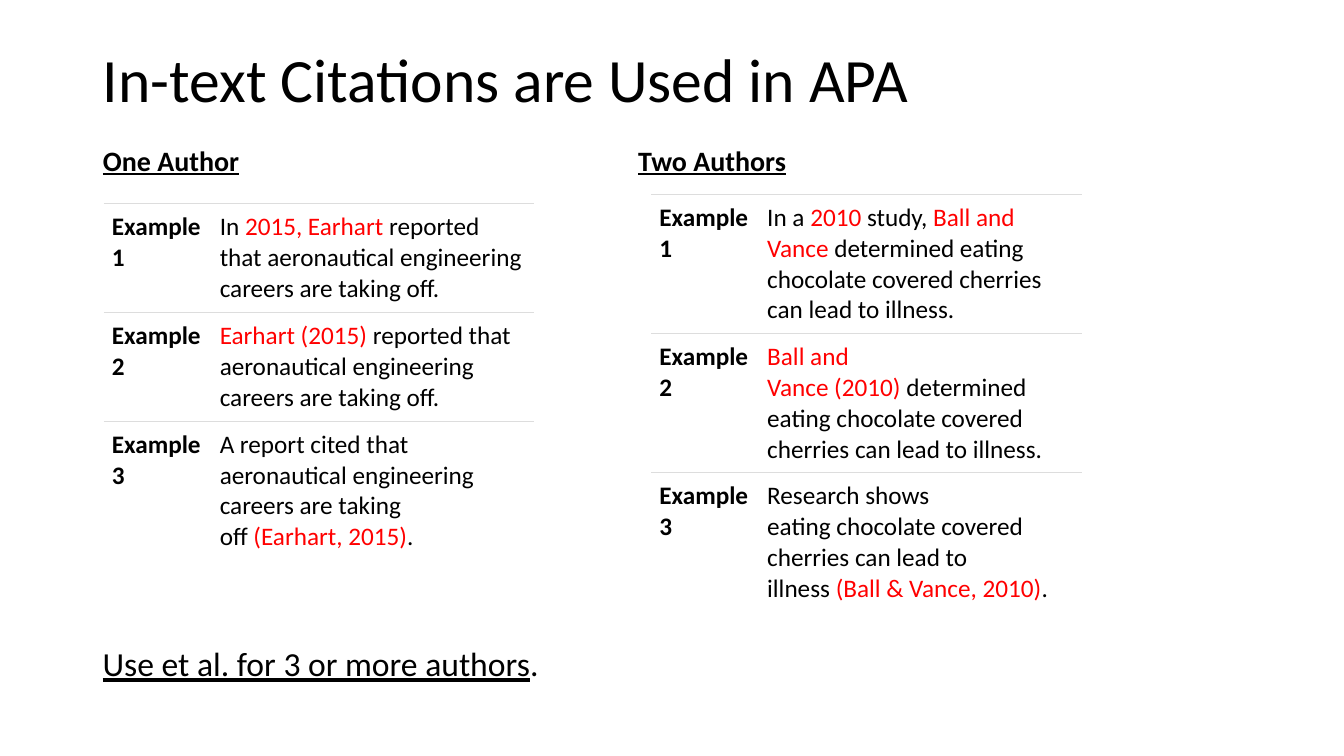
from lxml import etree
from pptx import Presentation
from pptx.dml.color import RGBColor
from pptx.enum import text
from pptx.oxml import ns
from pptx.util import Inches, Pt

BLACK = RGBColor(0, 0, 0)
RED = RGBColor(0xFF, 0, 0)
WHITE = RGBColor(0xFF, 0xFF, 0xFF)
GREY = RGBColor(0xDD, 0xDD, 0xDD)
FONT = "Calibri"
HARD = chr(160)  # no-break space, typed as ~ in the wording

# Wording: parts between bars are citations, shown in red
ONE = [
    "In|~2015, Earhart|~reported that aeronautical engineering careers are taking off.~",
    "|Earhart (2015)|~reported~that aeronautical engineering careers are taking off.",
    "A report cited~that aeronautical engineering careers are taking off~|(Earhart, 2015)|.",
]
TWO = [
    "In a~|2010|~study,~|Ball and Vance|~determined eating chocolate covered cherries "
    "can lead to illness.",
    "|Ball and Vance~(2010)|~determined eating chocolate covered cherries~can lead to illness.",
    "Research shows eating~chocolate covered cherries~can~lead to illness~"
    "|(Ball & Vance, 2010)|.",
]


class Deck:
    def __init__(self):
        self.prs = Presentation()
        self.prs.slide_width = Inches(13.33)
        self.prs.slide_height = Inches(7.5)
        self.slide = self.prs.slides.add_slide(self.prs.slide_layouts[5])

    def run(self, para, words, size, color=BLACK, bold=False, line=False):
        run = para.add_run()
        run.text = words
        font = run.font
        font.name, font.size, font.bold, font.underline = FONT, Pt(size), bold, line
        font.color.rgb = color

    def title(self, words, heads, stop):
        box = self.slide.shapes.title
        box.left, box.top = Inches(0.92), Inches(0.4)
        box.width, box.height = Inches(11.5), Inches(1.45)
        frame = box.text_frame
        frame.word_wrap = True
        frame.auto_size = text.MSO_AUTO_SIZE.NONE
        frame.vertical_anchor = text.MSO_ANCHOR.MIDDLE
        top, sub = frame.paragraphs[0], frame.add_paragraph()
        for para in (top, sub):
            para.alignment = text.PP_ALIGN.LEFT
            para.line_spacing = 0.9
            para.space_before = Pt(0)
        self.run(top, words, 44)
        # Column heads share one line, parted by a tab stop
        sub.space_before = Pt(22)
        tabs = etree.SubElement(sub._p.get_or_add_pPr(), ns.qn("a:tabLst"))
        etree.SubElement(tabs, ns.qn("a:tab"), pos=str(Inches(stop)), algn="l")
        self.run(sub, heads[0], 20, bold=True, line=True)
        self.run(sub, "\t", 20)
        self.run(sub, heads[1], 20, bold=True, line=True)

    def edge(self, cell):
        props = cell._tc.get_or_add_tcPr()
        for spot, side in enumerate(("lnL", "lnR", "lnT", "lnB")):
            line = etree.Element(ns.qn("a:" + side), w=str(Pt(0.75)))
            if side == "lnT":
                fill = etree.SubElement(line, ns.qn("a:solidFill"))
                etree.SubElement(fill, ns.qn("a:srgbClr"), val=str(GREY))
            else:
                etree.SubElement(line, ns.qn("a:noFill"))
            props.insert(spot, line)

    def cell(self, cell, words, bold=False):
        cell.margin_left = cell.margin_right = Inches(0.08)
        cell.margin_top = cell.margin_bottom = Inches(0.08)
        cell.fill.solid()
        cell.fill.fore_color.rgb = WHITE
        self.edge(cell)
        para = cell.text_frame.paragraphs[0]
        for num, part in enumerate(words.replace("~", HARD).split("|")):
            if part:
                self.run(para, part, 18, RED if num % 2 else BLACK, bold)

    def table(self, left, top, rows, highs):
        frame = self.slide.shapes.add_table(
            len(rows), 2, Inches(left), Inches(top), Inches(4.27), Inches(sum(highs)))
        grid = frame.table
        grid.first_row = grid.horz_banding = False
        grid.columns[0].width = Inches(1.07)
        grid.columns[1].width = Inches(3.2)
        for num, (words, high) in enumerate(zip(rows, highs)):
            grid.rows[num].height = Inches(high)
            self.cell(grid.cell(num, 0), f"Example {num + 1}", bold=True)
            self.cell(grid.cell(num, 1), words)

    def note(self, words, end):
        box = self.slide.shapes.add_textbox(
            Inches(0.92), Inches(6.33), Inches(11.15), Inches(0.5))
        frame = box.text_frame
        frame.word_wrap = True
        frame.auto_size = text.MSO_AUTO_SIZE.SHAPE_TO_FIT_TEXT
        self.run(frame.paragraphs[0], words, 24, line=True)
        self.run(frame.paragraphs[0], end, 24)


def main():
    deck = Deck()
    # Title and column heads
    deck.title("In-text Citations are Used in APA", ("One Author", "Two Authors"), 5.31)
    # Examples
    deck.table(1.03, 2.02, ONE, (1.08, 1.08, 1.38))
    deck.table(6.46, 1.93, TWO, (1.38, 1.38, 1.38))
    # Closing rule
    deck.note("Use et al. for 3 or more authors", ".")
    deck.prs.save("out.pptx")


if __name__ == "__main__":
    main()
